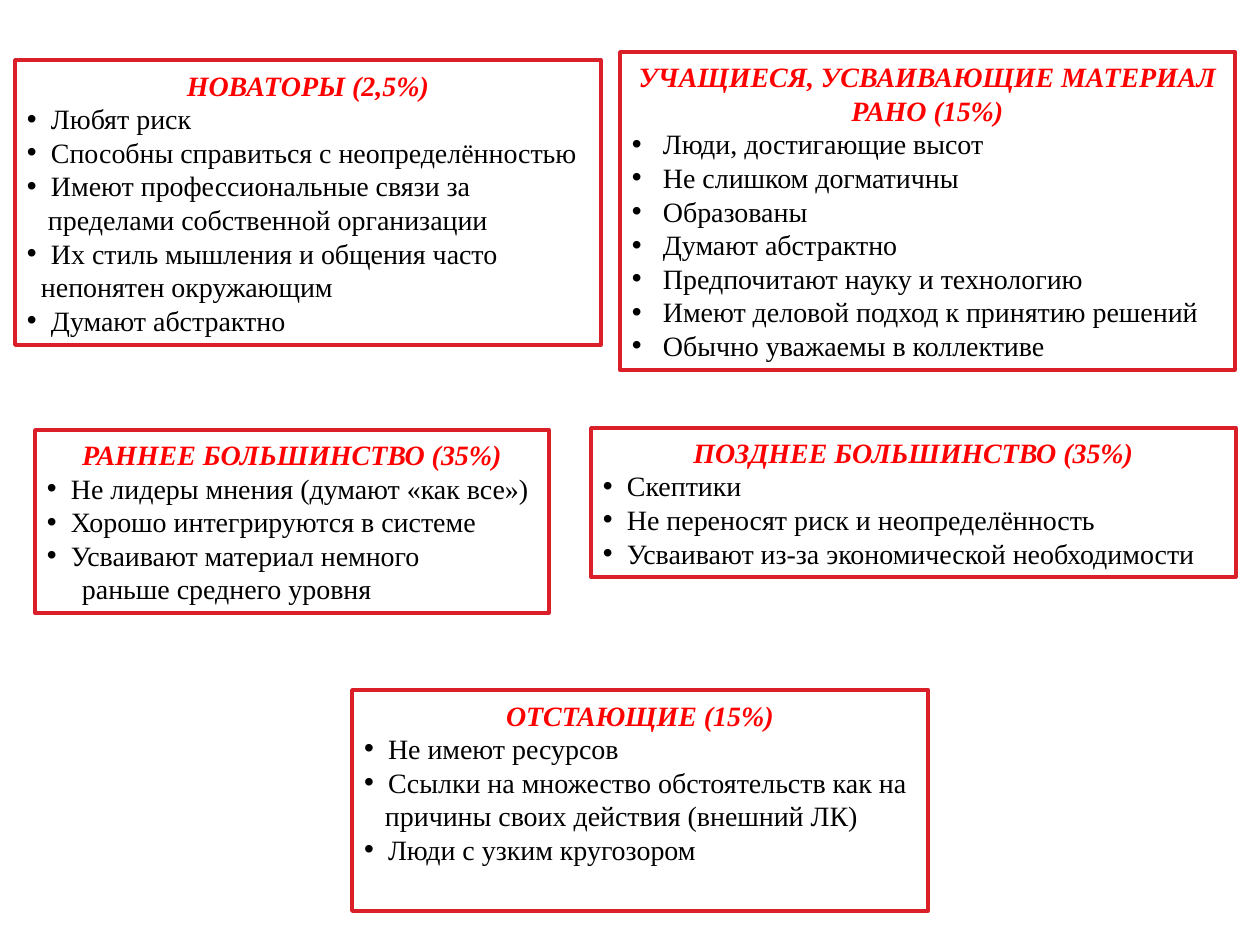
from dataclasses import dataclass

from lxml import etree
from pptx import Presentation
from pptx.dml.color import RGBColor
from pptx.enum.shapes import MSO_SHAPE
from pptx.enum.text import MSO_ANCHOR, PP_ALIGN
from pptx.oxml.ns import qn
from pptx.util import Pt

RECTANGLE = MSO_SHAPE.RECTANGLE
MIDDLE = MSO_ANCHOR.MIDDLE
LEFT, CENTER = PP_ALIGN.LEFT, PP_ALIGN.CENTER
EMU_PER_PX = 914400 / 126
SLIDE_WIDTH, SLIDE_HEIGHT = 1260, 945
BLANK_LAYOUT = 6


@dataclass(frozen=True)
class Theme:
    font: str = "Times New Roman"
    bullet_font: str = "Arial"
    text_size: int = 16
    border_width: int = 2
    title: RGBColor = RGBColor(0xFF, 0x00, 0x00)
    text: RGBColor = RGBColor(0x00, 0x00, 0x00)
    border: RGBColor = RGBColor(0xDA, 0x1F, 0x28)
    panel: RGBColor = RGBColor(0xFF, 0xFF, 0xFF)


@dataclass(frozen=True)
class Continuation:
    """A line without a bullet that carries on the item above it."""
    text: str
    indent: int


@dataclass(frozen=True)
class Group:
    title: str
    place: tuple
    items: tuple
    indent: int = 24
    bottom_inset: int = 6


GROUPS = (
    Group("НОВАТОРЫ (2,5%)", (15, 60, 586, 285), (
        "Любят риск",
        "Способны справиться с неопределённостью",
        "Имеют профессиональные связи за",
        Continuation("пределами собственной организации", 21),
        "Их стиль мышления и общения часто",
        Continuation("непонятен окружающим", 14),
        "Думают абстрактно",
    )),
    Group("УЧАЩИЕСЯ, УСВАИВАЮЩИЕ МАТЕРИАЛ РАНО (15%)", (620, 52, 615, 318), (
        "Люди, достигающие высот",
        "Не слишком догматичны",
        "Образованы",
        "Думают абстрактно",
        "Предпочитают науку и технологию",
        "Имеют деловой подход к принятию решений",
        "Обычно уважаемы в коллективе",
    ), indent=31),
    Group("РАННЕЕ БОЛЬШИНСТВО (35%)", (35, 430, 514, 183), (
        "Не лидеры мнения (думают «как все»)",
        "Хорошо интегрируются в системе",
        "Усваивают материал немного",
        Continuation("раньше среднего уровня", 35),
    )),
    Group("ПОЗДНЕЕ БОЛЬШИНСТВО (35%)", (591, 428, 645, 149), (
        "Скептики",
        "Не переносят риск и неопределённость",
        "Усваивают из-за экономической необходимости",
    )),
    Group("ОТСТАЮЩИЕ (15%)", (352, 690, 576, 221), (
        "Не имеют ресурсов",
        "Ссылки на множество обстоятельств как на",
        Continuation("причины своих действия (внешний ЛК)", 21),
        "Люди с узким кругозором",
    ), bottom_inset=43),
)


def px(length):
    return round(length * EMU_PER_PX)


class SlideBuilder:
    def __init__(self, slide, theme):
        self.slide = slide
        self.theme = theme

    def panel(self, place, bottom_inset):
        """Add a bordered box and return its text frame."""
        box = self.slide.shapes.add_shape(RECTANGLE, *map(px, place))
        box.shadow.inherit = False
        box.fill.solid()
        box.fill.fore_color.rgb = self.theme.panel
        box.line.color.rgb = self.theme.border
        box.line.width = Pt(self.theme.border_width)
        frame = box.text_frame
        frame.word_wrap = True
        frame.vertical_anchor = MIDDLE
        frame.margin_left = frame.margin_right = px(12)
        frame.margin_top = px(6)
        frame.margin_bottom = px(bottom_inset)
        return frame

    def add_text(self, para, text, *, color, align=LEFT, emphasis=False,
                 indent=0, bullet=False):
        para.alignment = align
        span = para.add_run()
        span.text = text
        font = span.font
        font.name = self.theme.font
        font.size = Pt(self.theme.text_size)
        font.bold = font.italic = emphasis
        font.color.rgb = color
        properties = para._p.get_or_add_pPr()
        properties.set("marL", str(px(indent)))
        if bullet:
            properties.set("indent", str(-px(indent)))
            etree.SubElement(properties, qn("a:buFont"),
                             typeface=self.theme.bullet_font)
            etree.SubElement(properties, qn("a:buChar"), char="•")

    def group(self, group):
        frame = self.panel(group.place, group.bottom_inset)
        self.add_text(frame.paragraphs[0], group.title, color=self.theme.title,
                      align=CENTER, emphasis=True)
        for item in group.items:
            para = frame.add_paragraph()
            if isinstance(item, Continuation):
                self.add_text(para, item.text, color=self.theme.text,
                              indent=item.indent)
            else:
                self.add_text(para, item, color=self.theme.text,
                              indent=group.indent, bullet=True)


def main():
    deck = Presentation()
    deck.slide_width, deck.slide_height = px(SLIDE_WIDTH), px(SLIDE_HEIGHT)
    page = deck.slides.add_slide(deck.slide_layouts[BLANK_LAYOUT])
    builder = SlideBuilder(page, Theme())
    for group in GROUPS:
        builder.group(group)
    deck.save("out.pptx")


if __name__ == "__main__":
    main()
